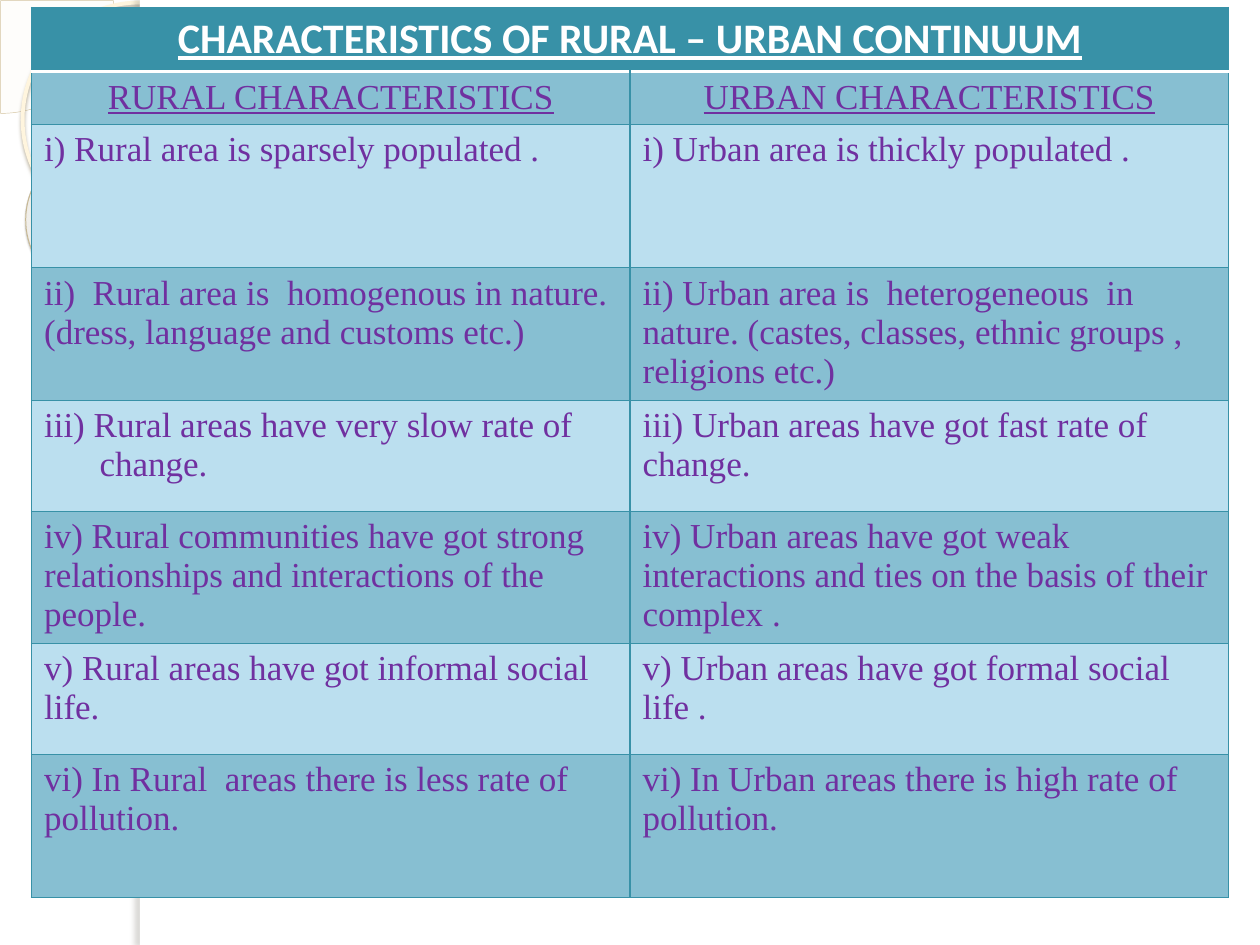
from lxml import etree
from pptx import Presentation
from pptx.dml.color import RGBColor
from pptx.enum import shapes, text
from pptx.oxml.ns import qn
from pptx.util import Inches, Pt

COLORS = {
    "white": "FFFFFF", "teal": "3891A7", "band_dark": "87BFD2",
    "band_light": "BBDFEF", "purple": "7030A0", "cream": "FEFAF4",
    "pie_line": "D3C39F", "ring_line": "FFF5DE", "ring_shadow": "B0A68F",
    "donut_line": "C7B893", "donut_shadow": "5A5444", "edge_shadow": "736F63",
}
DONUT_STOPS = [(0, "FFFCF6", 70), (70, "FFFEFB", 55), (100, "F0D28E", 60)]
TITLE = "CHARACTERISTICS OF RURAL – URBAN CONTINUUM"
ROWS = [
    ("RURAL CHARACTERISTICS", "URBAN CHARACTERISTICS"),
    ("i) Rural area is sparsely populated .",
     "i) Urban area is thickly populated ."),
    ("ii)  Rural area is  homogenous in nature. (dress, language and customs etc.)",
     "ii) Urban area is  heterogeneous  in nature. "
     "(castes, classes, ethnic groups , religions etc.)"),
    ("iii) Rural areas have very slow rate of change.",
     "iii) Urban areas have got fast rate of change."),
    ("iv) Rural communities have got strong relationships and interactions of the people.",
     "iv) Urban areas have got weak interactions and ties on the basis of their complex ."),
    ("v) Rural areas have got informal social life.",
     "v) Urban areas have got formal social life ."),
    ("vi) In Rural  areas there is less rate of pollution.",
     "vi) In Urban areas there is high rate of pollution."),
]
ROW_HEIGHTS = [0.5, 0.42, 1.14, 1.05, 0.88, 1.05, 0.88, 1.14]
HANGING = {(2, 0), (4, 0)}  # cells with a hanging indent


def rgb(name):
    return RGBColor.from_string(COLORS[name])


def add(parent, tag, **attrs):
    child = etree.SubElement(parent, qn(tag))
    for key, value in attrs.items():
        child.set(key, str(value))
    return child


def add_color(parent, color, alpha=100):
    clr = add(parent, "a:srgbClr", val=color)
    if alpha < 100:
        add(clr, "a:alpha", val=alpha * 1000)


def add_decor(s, kind, box, fill=None, line=None, width=0):
    sp = s.shapes.add_shape(kind, *map(Inches, box))
    sp.shadow.inherit = False
    if fill:
        sp.fill.solid()
        sp.fill.fore_color.rgb = rgb(fill)
    else:
        sp.fill.background()
    if line:
        sp.line.color.rgb = rgb(line)
        sp.line.width = Pt(width)
    else:
        sp.line.fill.background()
    return sp


def add_shadow(sp, color, alpha, blur, dist, angle):
    effects = sp._element.spPr.find(qn("a:effectLst"))
    shadow = add(effects, "a:outerShdw", blurRad=Pt(blur), dist=Pt(dist),
                 dir=angle * 60000, algn="tl", rotWithShape=0)
    add_color(shadow, COLORS[color], alpha)


def set_radial_fill(sp, stops):
    old = sp._element.spPr.find(qn("a:noFill"))
    grad = etree.Element(qn("a:gradFill"), rotWithShape="1")
    gs_list = add(grad, "a:gsLst")
    for pos, color, alpha in stops:
        add_color(add(gs_list, "a:gs", pos=pos * 1000), color, alpha)
    radial = add(grad, "a:path", path="circle")
    add(radial, "a:fillToRect", l=-408000, t=-50000, r=508000, b=150000)
    old.getparent().replace(old, grad)


def draw_background(s):
    kinds = shapes.MSO_SHAPE
    # Corner circles
    pie = add_decor(s, kinds.PIE, (-0.89, -0.89, 1.79, 1.79), "cream", "pie_line", 0.25)
    pie.adjustments[0], pie.adjustments[1] = 0, 54
    solid = pie._element.spPr.find(qn("a:solidFill"))
    add(solid[0], "a:alpha", val=33000)
    ring = add_decor(s, kinds.OVAL, (0.18, 0.02, 1.86, 1.86), None, "ring_line", 2.15)
    add_shadow(ring, "ring_shadow", 85, 2, 2, 90)
    donut = add_decor(s, kinds.DONUT, (0.2, 1.15, 1.23, 1.21), None, "donut_line", 0.58)
    donut.adjustments[0] = 0.12
    donut.rotation = 38.6
    set_radial_fill(donut, DONUT_STOPS)
    add_shadow(donut, "donut_shadow", 35, 1, 1.2, 75)
    # White page and its shaded left edge
    add_decor(s, kinds.RECTANGLE, (1.11, 0, 8.89, 7.5), "white")
    edge = add_decor(s, kinds.RECTANGLE, (1.11, 0, 0.08, 7.5), "white")
    add_shadow(edge, "edge_shadow", 25, 3, 3, 180)


def set_borders(cell, **special):
    tc_pr = cell._tc.get_or_add_tcPr()
    for i, side in enumerate("LRTB"):
        color, width = special.get(side, ("teal", 0.75))
        ln = etree.Element(qn(f"a:ln{side}"), w=str(Pt(width)))
        add_color(add(ln, "a:solidFill"), COLORS[color])
        tc_pr.insert(i, ln)


def fill_cell(cell, words, fill, font, size, color, heading=False, bold=False):
    cell.fill.solid()
    cell.fill.fore_color.rgb = rgb(fill)
    p = cell.text_frame.paragraphs[0]
    p.text = words
    p.font.name, p.font.size = font, Pt(size)
    p.font.color.rgb = rgb(color)
    p.font.bold, p.font.underline = bold, heading
    if heading:
        p.alignment = text.PP_ALIGN.CENTER
    return p


def add_comparison(s):
    table = s.shapes.add_table(len(ROW_HEIGHTS), 2, Inches(0.25), Inches(0.06),
                               Inches(9.5), Inches(sum(ROW_HEIGHTS))).table
    for row, height in zip(table.rows, ROW_HEIGHTS):
        row.height = Inches(height)

    # Title row
    table.cell(0, 0).merge(table.cell(0, 1))
    fill_cell(table.cell(0, 0), TITLE, "teal", "Calibri", 24, "white", True, True)
    for c in range(2):
        set_borders(table.cell(0, c), B=("white", 2))

    # Column headings and banded rows
    for r, pair in enumerate(ROWS, 1):
        for c, words in enumerate(pair):
            cell = table.cell(r, c)
            p = fill_cell(cell, words, "band_dark" if r % 2 else "band_light",
                          "Times New Roman", 20, "purple", heading=r == 1)
            set_borders(cell, **({"T": ("white", 2)} if r == 1 else {}))
            if (r, c) in HANGING:
                p_pr = p._p.get_or_add_pPr()
                p_pr.set("marL", str(Inches(0.44)))
                p_pr.set("indent", str(-Inches(0.44)))


def main():
    prs = Presentation()
    prs.slide_width, prs.slide_height = Inches(10), Inches(7.5)
    s = prs.slides.add_slide(prs.slide_layouts[6])
    draw_background(s)
    add_comparison(s)
    prs.save("out.pptx")


if __name__ == "__main__":
    main()
